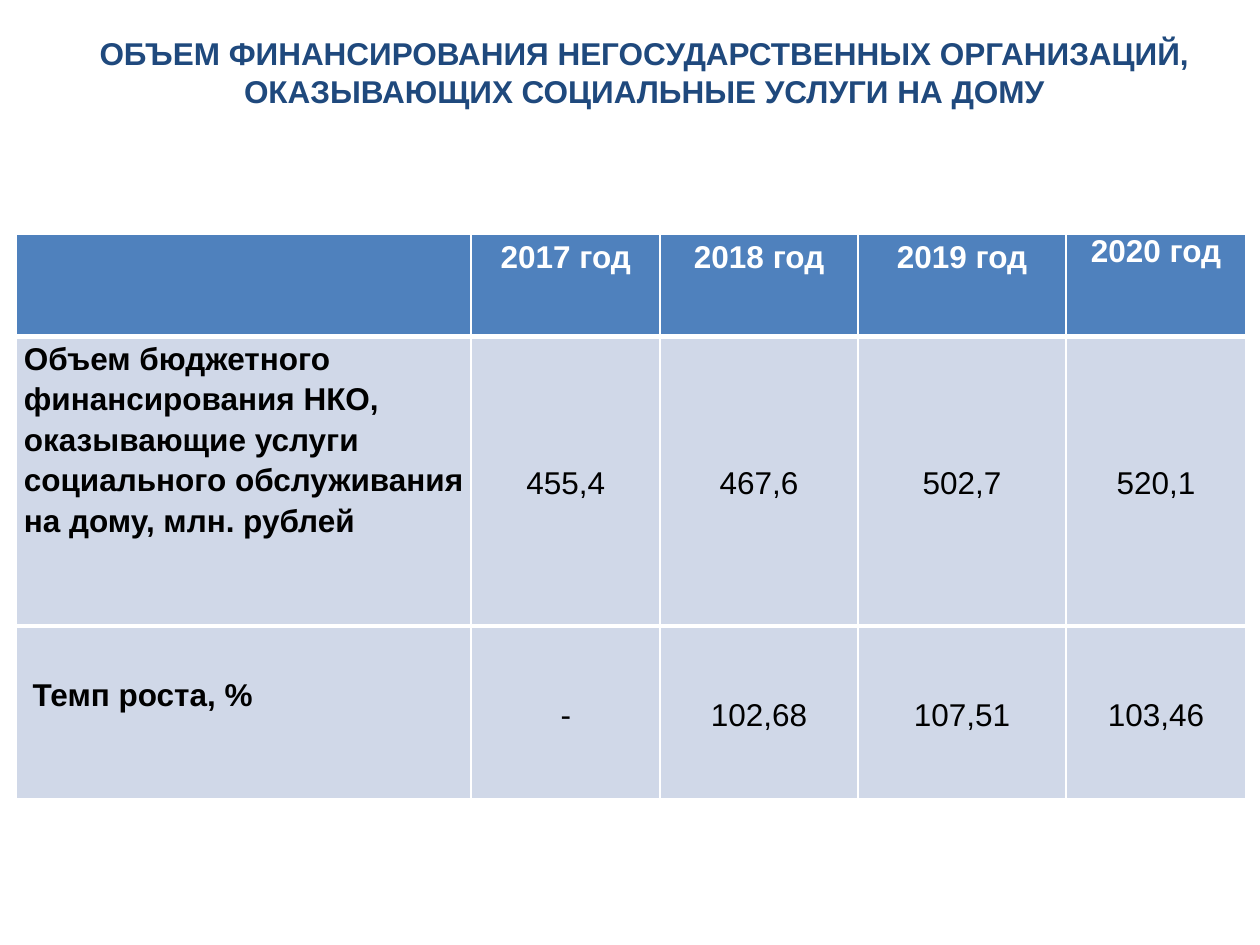
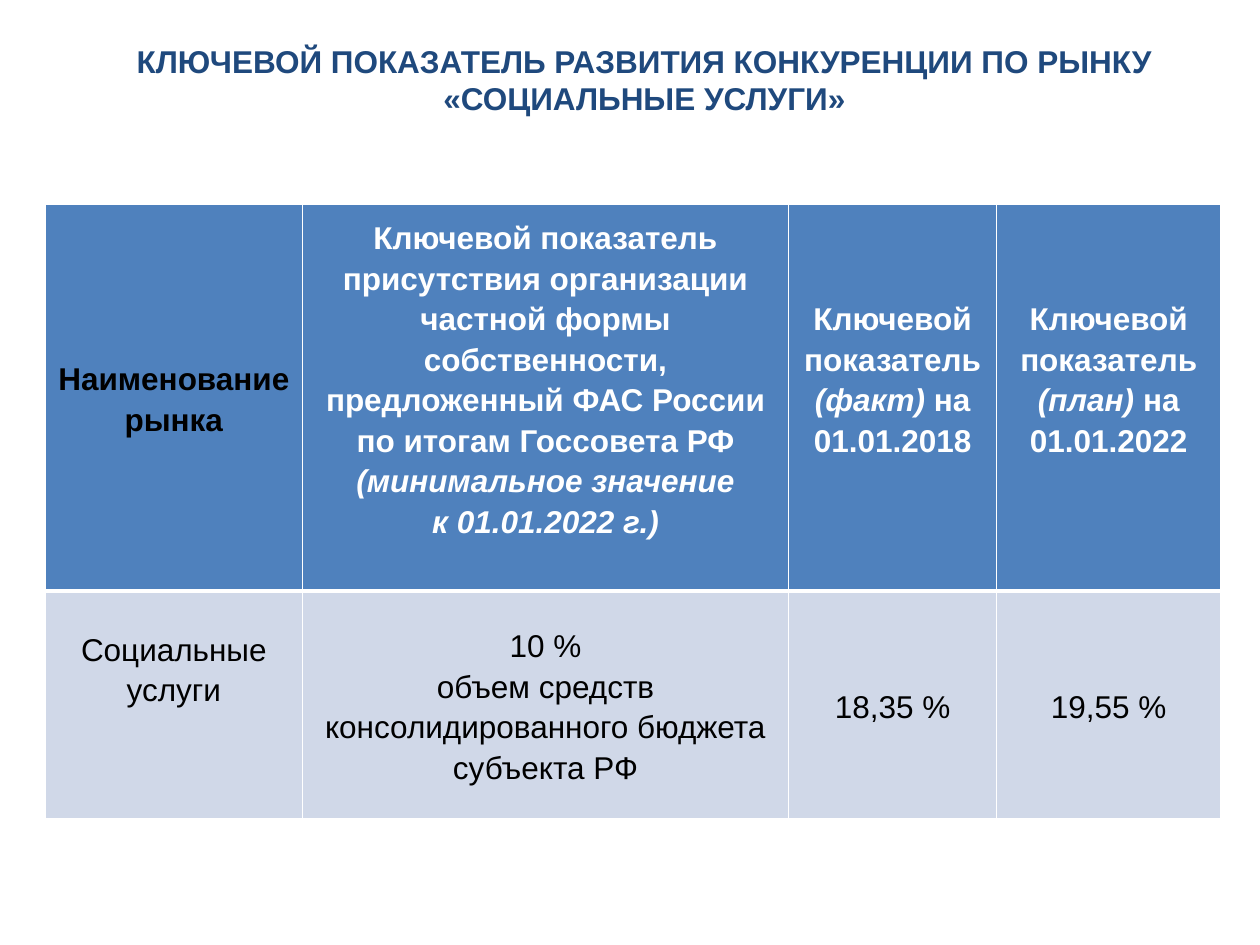
from dataclasses import dataclass

from lxml import etree
from pptx import Presentation
from pptx.dml.color import RGBColor
from pptx.enum.text import MSO_ANCHOR as Anchor, PP_ALIGN as Align
from pptx.oxml.ns import qn
from pptx.util import Inches, Pt

FONT, SIZE = "Arial", 18
NAVY, BLUE, PALE, WHITE, BLACK = "1F497D", "4F81BD", "D0D8E8", "FFFFFF", "000000"
SIDE_INSET = 0.06


@dataclass
class Cell:
    """Paragraphs of one table cell; each is a string or a list of (text, italic) runs."""
    paragraphs: list
    color: str = BLACK
    bold: bool = False
    align: Align = Align.CENTER
    anchor: Anchor = Anchor.MIDDLE
    spacing: float = 1.15
    left: float = SIDE_INSET
    top: float = 0
    bottom: float = 0


def heading(*paragraphs, **options):
    return Cell(list(paragraphs), **{"color": WHITE, "bold": True, **options})


def row_label(text, **options):
    return Cell([text], bold=True, align=Align.LEFT, anchor=Anchor.TOP, **options)


def values(*texts):
    return [Cell([text]) for text in texts]


def years(*texts, **options):
    return [heading(f"{year} год", anchor=Anchor.TOP, **options) for year in texts]


def dated_indicator(kind, date):
    return heading([("Ключевой показатель ", False), (f"({kind})", True),
                    (f" на {date}", False)], bottom=0.31)


SLIDES = [
    {
        "title": "ОБЪЕМ ФИНАНСИРОВАНИЯ НЕГОСУДАРСТВЕННЫХ ОРГАНИЗАЦИЙ, "
                 "ОКАЗЫВАЮЩИХ СОЦИАЛЬНЫЕ УСЛУГИ НА ДОМУ",
        "title_top": 0.13,
        "table_at": (0.13, 1.86),
        "columns": [3.61, 1.5, 1.57, 1.65, 1.43],
        "heights": [0.81, 2.3, 1.37],
        "rows": [
            [heading(""), *years(2017, 2018, 2019), *years(2020, spacing=1.0)],
            [row_label("Объем бюджетного финансирования НКО, оказывающие услуги "
                       "социального обслуживания на дому, млн. рублей"),
             *values("455,4", "467,6", "502,7", "520,1")],
            [row_label("Темп роста, %", left=0.13, top=0.37),
             *values("-", "102,68", "107,51", "103,46")],
        ],
    },
    {
        "title": "КЛЮЧЕВОЙ ПОКАЗАТЕЛЬ РАЗВИТИЯ КОНКУРЕНЦИИ ПО РЫНКУ «СОЦИАЛЬНЫЕ УСЛУГИ»",
        "title_top": 0.19,
        "table_at": (0.36, 1.62),
        "columns": [2.04, 3.86, 1.65, 1.78],
        "heights": [2.99, 1.81],
        "rows": [
            [heading("Наименование рынка", color=BLACK),
             heading("Ключевой показатель присутствия организации частной формы "
                     "собственности, предложенный ФАС России по итогам Госсовета РФ",
                     [("(минимальное значение", True)], [("к 01.01.2022 г.)", True)],
                     bottom=0.31),
             dated_indicator("факт", "01.01.2018"),
             dated_indicator("план", "01.01.2022")],
            [Cell(["Социальные услуги"], anchor=Anchor.TOP, top=0.29),
             Cell(["10 %", "объем средств консолидированного бюджета субъекта РФ"]),
             *values("18,35 %", "19,55 %")],
        ],
    },
]


def rgb(color):
    return RGBColor.from_string(color)


def style(paragraph, color, bold, align):
    paragraph.alignment = align
    font = paragraph.font
    font.name, font.size, font.bold = FONT, Pt(SIZE), bold
    font.color.rgb = rgb(color)


def add_title(slide, text, top):
    box = slide.shapes.add_textbox(Inches(0.35), Inches(top), Inches(9.53), Inches(0.88))
    frame = box.text_frame
    frame.word_wrap = True
    frame.vertical_anchor = Anchor.MIDDLE
    frame.text = text
    style(frame.paragraphs[0], NAVY, True, Align.CENTER)


def add_borders(target, top, bottom):
    """White cell borders; widths in points, side borders are one point."""
    properties = target._tc.get_or_add_tcPr()
    for side, width in (("L", 1), ("R", 1), ("T", top), ("B", bottom)):
        line = etree.SubElement(properties, qn(f"a:ln{side}"), w=str(Pt(width)))
        fill = etree.SubElement(line, qn("a:solidFill"))
        etree.SubElement(fill, qn("a:srgbClr"), val=WHITE)


def fill_cell(target, cell, background):
    target.fill.solid()
    target.fill.fore_color.rgb = rgb(background)
    target.vertical_anchor = cell.anchor
    target.margin_left, target.margin_right = Inches(cell.left), Inches(SIDE_INSET)
    target.margin_top, target.margin_bottom = Inches(cell.top), Inches(cell.bottom)
    frame = target.text_frame
    for index, content in enumerate(cell.paragraphs):
        paragraph = frame.add_paragraph() if index else frame.paragraphs[0]
        if isinstance(content, str):
            paragraph.text = content
        else:
            for text, italic in content:
                run = paragraph.add_run()
                run.text, run.font.italic = text, italic
        paragraph.line_spacing = cell.spacing
        style(paragraph, cell.color, cell.bold, cell.align)


def add_grid(slide, at, columns, heights, rows):
    left, top = at
    table = slide.shapes.add_table(
        len(rows), len(columns), Inches(left), Inches(top),
        Inches(sum(columns)), Inches(sum(heights))).table
    table.horz_banding = False
    for column, width in zip(table.columns, columns):
        column.width = Inches(width)
    for r, (cells, height) in enumerate(zip(rows, heights)):
        table.rows[r].height = Inches(height)
        for c, cell in enumerate(cells):
            target = table.cell(r, c)
            add_borders(target, 3 if r else 1, 3 if r < len(rows) - 1 else 1)
            fill_cell(target, cell, PALE if r else BLUE)


def main():
    deck = Presentation()
    deck.slide_width, deck.slide_height = Inches(10), Inches(7.5)
    for content in SLIDES:
        slide = deck.slides.add_slide(deck.slide_layouts[6])
        add_title(slide, content["title"], content["title_top"])
        add_grid(slide, content["table_at"], content["columns"],
                 content["heights"], content["rows"])
    deck.save("out.pptx")


if __name__ == "__main__":
    main()
